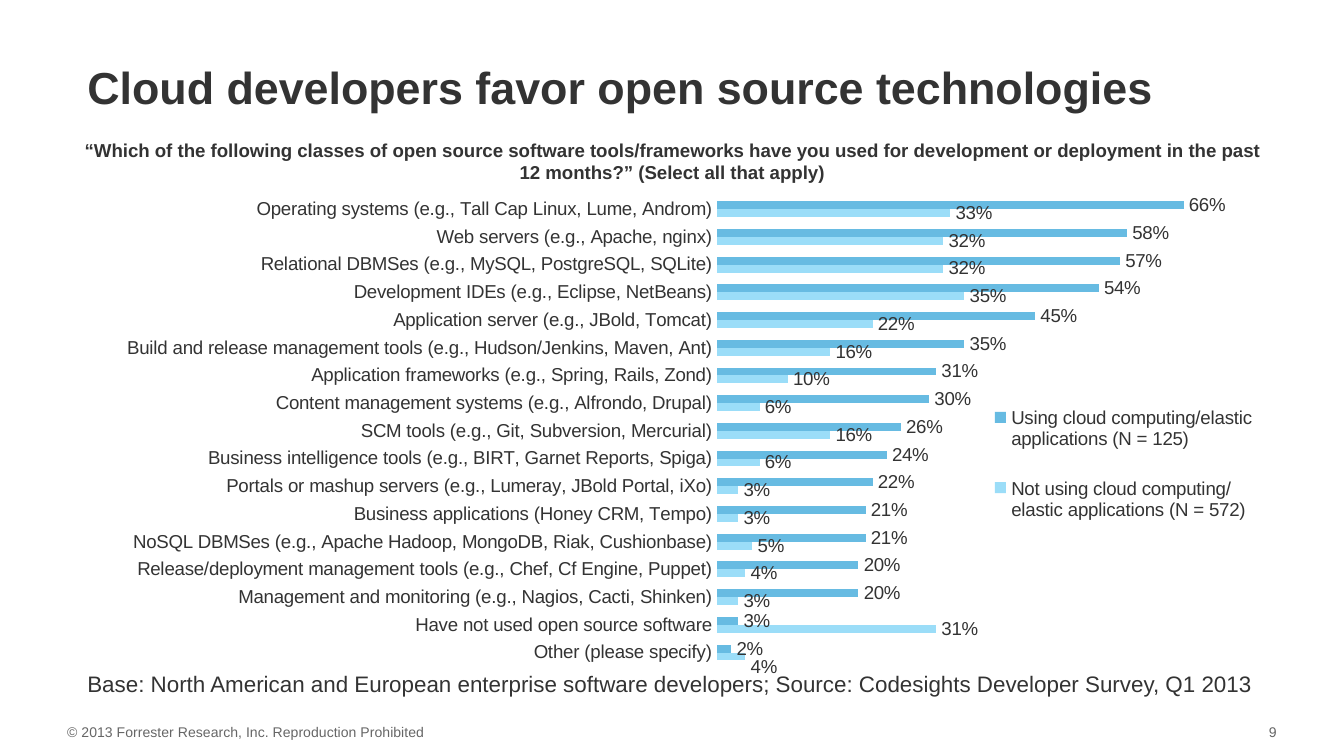
from lxml import etree
from pptx import Presentation
from pptx.chart.data import CategoryChartData
from pptx.dml.color import RGBColor
from pptx.enum.chart import XL_CHART_TYPE as ChartType, XL_LABEL_POSITION as LabelPosition
from pptx.enum.chart import XL_LEGEND_POSITION as LegendPosition, XL_TICK_MARK as TickMark
from pptx.enum.text import MSO_ANCHOR as Anchor, PP_ALIGN as Align
from pptx.oxml.ns import qn
from pptx.util import Cm, Pt

INK = RGBColor(0x33, 0x33, 0x33)
GREY = RGBColor(0x66, 0x66, 0x66)
LIGHT_BLUE = RGBColor(0x9B, 0xDD, 0xF8)
BLUE = RGBColor(0x67, 0xBB, 0xE2)
FONT = "Arial"


def write(box, place, text, size, color=INK, bold=False, align=Align.LEFT, anchor=Anchor.TOP, inset=(0, 0)):
    """Place a box and fill it with one formatted paragraph."""
    box.left, box.top, box.width, box.height = [Cm(length) for length in place]
    frame = box.text_frame
    frame.word_wrap = True
    frame.vertical_anchor = anchor
    frame.margin_left = frame.margin_right = Cm(inset[0])
    frame.margin_top = frame.margin_bottom = Cm(inset[1])
    para = frame.paragraphs[0]
    para.alignment = align
    para.space_before = Pt(0)
    span = para.add_run()
    span.text = text
    span.font.name, span.font.size = FONT, Pt(size)
    span.font.bold, span.font.color.rgb = bold, color
    return para


def add_layout(parent, index, **settings):
    """Insert a manual chart layout as the given child of a chart element."""
    for old in parent.findall(qn("c:layout")):
        parent.remove(old)
    layout = etree.Element(qn("c:layout"))
    manual = etree.SubElement(layout, qn("c:manualLayout"))
    for name, value in settings.items():
        etree.SubElement(manual, qn("c:" + name)).set("val", str(value))
    parent.insert(index, layout)


deck = Presentation()
deck.slide_width, deck.slide_height = Cm(25.4), Cm(14.29)
page = deck.slides.add_slide(deck.slide_layouts[1])

# Title
title = write(page.shapes.title, (1.65, 1.24, 22.1, 0.94),
              "Cloud developers favor open source technologies", 24, bold=True)
title.line_spacing = 0.9

# Base and source line, without a bullet
base = write(page.placeholders[1], (1.65, 12.67, 22.1, 0.51),
             "Base: North American and European enterprise software developers; "
             "Source: Codesights Developer Survey, Q1 2013", 12, anchor=Anchor.BOTTOM)
properties = base._p.get_or_add_pPr()
properties.set("marL", "0")
properties.set("indent", "0")
etree.SubElement(properties, qn("a:buNone"))

# Survey question, footer and page number
question = ("“Which of the following classes of open source software tools/frameworks have you used "
            "for development or deployment in the past 12 months?” (Select all that apply)")
for place, text, style in [
    ((1.27, 2.49, 22.86, 1.12), question,
     dict(size=10, bold=True, align=Align.CENTER, inset=(0.25, 0.13))),
    ((1.27, 13.67, 12.9, 0.33), "© 2013 Forrester Research, Inc. Reproduction Prohibited",
     dict(size=7.5, color=GREY)),
    ((19.05, 13.67, 5.08, 0.46), "9", dict(size=7.5, color=GREY, align=Align.RIGHT)),
]:
    write(page.shapes.add_textbox(0, 0, 0, 0), place, text, **style)

# Survey results from bottom to top: answer, not using cloud, using cloud
results = [
    ("Other (please specify)", 0.04, 0.02),
    ("Have not used open source software", 0.31, 0.03),
    ("Management and monitoring (e.g., Nagios, Cacti, Shinken)", 0.03, 0.2),
    ("Release/deployment management tools (e.g., Chef, Cf Engine, Puppet)", 0.04, 0.2),
    ("NoSQL DBMSes (e.g., Apache Hadoop, MongoDB, Riak, Cushionbase)", 0.05, 0.21),
    ("Business applications (Honey CRM, Tempo)", 0.03, 0.21),
    ("Portals or mashup servers (e.g., Lumeray, JBold Portal, iXo)", 0.03, 0.22),
    ("Business intelligence tools (e.g., BIRT, Garnet Reports, Spiga)", 0.06, 0.24),
    ("SCM tools (e.g., Git, Subversion, Mercurial)", 0.16, 0.26),
    ("Content management systems (e.g., Alfrondo, Drupal)", 0.06, 0.3),
    ("Application frameworks (e.g., Spring, Rails, Zond)", 0.1, 0.31),
    ("Build and release management tools (e.g., Hudson/Jenkins, Maven, Ant)", 0.16, 0.35),
    ("Application server (e.g., JBold, Tomcat)", 0.22, 0.45),
    ("Development IDEs (e.g., Eclipse, NetBeans)", 0.35, 0.54),
    ("Relational DBMSes (e.g., MySQL, PostgreSQL, SQLite)", 0.32, 0.57),
    ("Web servers (e.g., Apache, nginx)", 0.32, 0.58),
    ("Operating systems (e.g., Tall Cap Linux, Lume, Androm)", 0.33, 0.66),
]
answers, not_using, using = zip(*results)
data = CategoryChartData(number_format="0%")
data.categories = answers
data.add_series("Not using cloud computing/elastic applications (N = 572)", not_using)
data.add_series("Using cloud computing/elastic applications (N = 125)", using)

# Bar chart
chart = page.shapes.add_chart(ChartType.BAR_CLUSTERED, Cm(1.01), Cm(3.21), Cm(25.6), Cm(9.68), data).chart
chart.has_title = False
chart.font.name, chart.font.size, chart.font.color.rgb = FONT, Pt(10), INK
plot = chart.plots[0]
plot.gap_width, plot.overlap, plot.vary_by_categories = 150, 0, False
add_layout(chart.element.find(".//" + qn("c:plotArea")), 0, layoutTarget="inner",
           xMode="edge", yMode="edge", x=0.49, y=0.05, w=0.36, h=0.92)

# Axes
answer_axis, share_axis = chart.category_axis, chart.value_axis
answer_axis.major_tick_mark = answer_axis.minor_tick_mark = TickMark.NONE
answer_axis.format.line.fill.background()
share_axis.minimum_scale, share_axis.maximum_scale = 0, 0.69
share_axis.has_major_gridlines = False
share_axis.visible = False

# Bars and their labels
for series, color in zip(plot.series, (LIGHT_BLUE, BLUE)):
    series.format.fill.solid()
    series.format.fill.fore_color.rgb = color
    labels = series.data_labels
    labels.show_value = True
    labels.number_format, labels.number_format_is_linked = "0%", False
    labels.position = LabelPosition.OUTSIDE_END

# The lowest label sits a little below its bar
lowest = plot.series[0].points[0].data_label
lowest.position = LabelPosition.OUTSIDE_END
lowest.font.size, lowest.font.name, lowest.font.color.rgb = Pt(10), FONT, INK
add_layout(chart.element.find(".//" + qn("c:dLbl")), 1, x=0, y=0.02)

# Legend
chart.has_legend = True
chart.legend.position = LegendPosition.RIGHT
chart.legend.include_in_layout = False
add_layout(chart.element.find(".//" + qn("c:legend")), 1,
           xMode="edge", yMode="edge", x=0.69, y=0.41, w=0.2, h=0.33)

deck.save("out.pptx")
